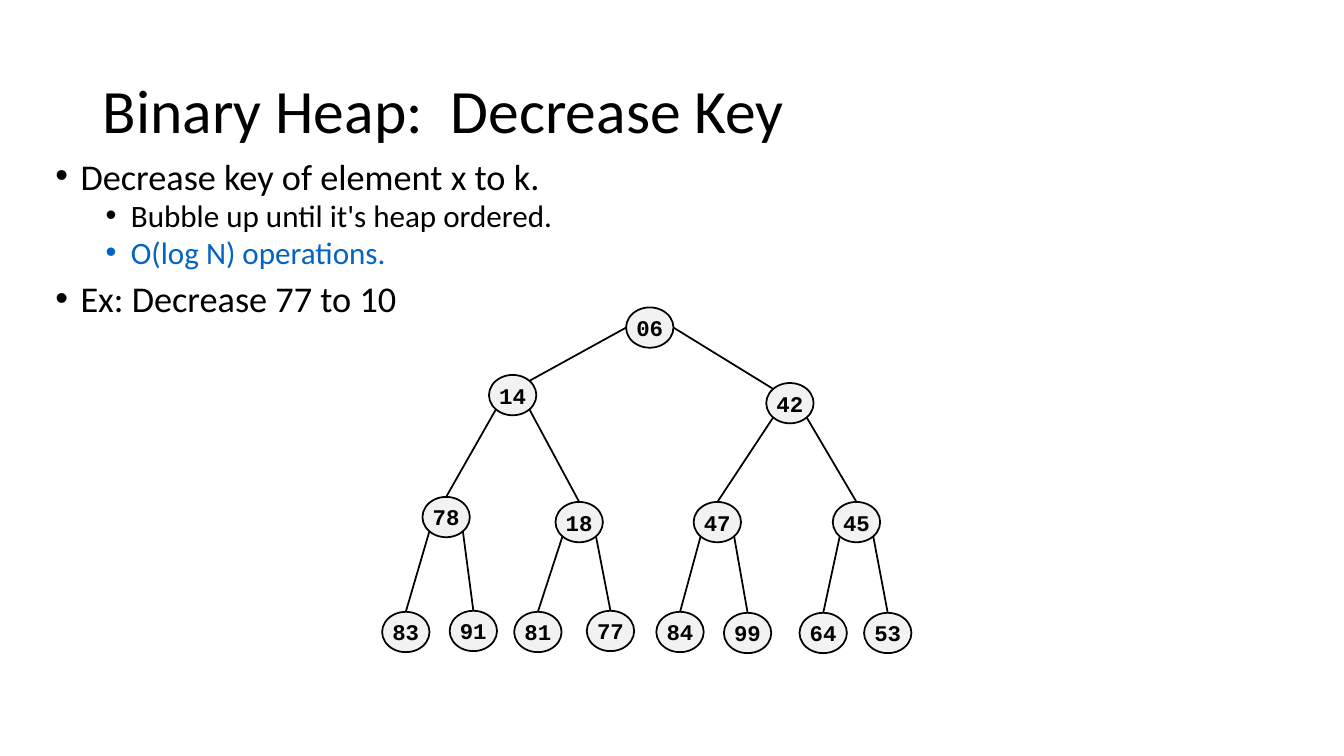
from dataclasses import dataclass
from math import sqrt

from lxml import etree
from pptx import Presentation
from pptx.dml.color import RGBColor
from pptx.enum.shapes import MSO_CONNECTOR, MSO_SHAPE
from pptx.enum.text import MSO_ANCHOR, PP_ALIGN
from pptx.oxml.ns import qn
from pptx.util import Inches, Pt

STRAIGHT = MSO_CONNECTOR.STRAIGHT
OVAL = MSO_SHAPE.OVAL
MIDDLE, TOP = MSO_ANCHOR.MIDDLE, MSO_ANCHOR.TOP
LEFT, CENTER = PP_ALIGN.LEFT, PP_ALIGN.CENTER


@dataclass(frozen=True)
class Theme:
    ink: str = "000000"
    accent: str = "0563C1"
    node_fill: str = "F2F2F2"
    text_font: str = "Calibri"
    node_font: str = "Courier New"
    title_size: float = 44
    bullet_sizes: tuple = (25.9, 22.2)
    node_size: float = 16
    line_width: float = 1.25


NODE_WIDTH, NODE_HEIGHT = 0.47, 0.4

BULLETS = [
    ("Decrease key of element x to k.", 0, Theme.ink),
    ("Bubble up until it's heap ordered.", 1, Theme.ink),
    ("O(log N) operations.", 1, Theme.accent),
    ("Ex: Decrease 77 to 10", 0, Theme.ink),
]

# Key, left and top in level order: the parent of entry i is entry (i - 1) // 2.
HEAP = [
    ("06", 6.21, 3.05),
    ("14", 4.85, 3.72), ("42", 7.6, 3.8),
    ("78", 4.19, 4.93), ("18", 5.51, 4.98), ("47", 6.88, 4.98), ("45", 8.26, 4.98),
    ("83", 3.79, 6.07), ("91", 4.46, 6.06), ("81", 5.1, 6.07), ("77", 5.82, 6.06),
    ("84", 6.51, 6.07), ("99", 7.18, 6.08), ("64", 7.93, 6.08), ("53", 8.57, 6.08),
]


def set_attributes(target, values):
    for name, value in values.items():
        setattr(target, name, value)


def rim_point(node, across, down):
    """Return a point on a node's outline, in the direction given from its centre."""
    _, left, top = node
    length = sqrt(across ** 2 + down ** 2)
    return (left + NODE_WIDTH / 2 * (1 + across / length),
            top + NODE_HEIGHT / 2 * (1 + down / length))


class SlideBuilder:
    def __init__(self, slide, theme):
        self.slide = slide
        self.theme = theme

    def styled_run(self, paragraph, text, font, size, color, bold=False):
        run = paragraph.add_run()
        run.text = text
        set_attributes(run.font, {"name": font, "size": Pt(size), "bold": bold})
        run.font.color.rgb = RGBColor.from_string(color)

    def text_frame(self, left, top, width, height, anchor):
        box = self.slide.shapes.add_textbox(
            Inches(left), Inches(top), Inches(width), Inches(height))
        set_attributes(box.text_frame, {"word_wrap": True, "vertical_anchor": anchor})
        return box.text_frame

    def title(self, text):
        paragraph = self.text_frame(0.92, 0.4, 11.5, 1.45, MIDDLE).paragraphs[0]
        set_attributes(paragraph, {"line_spacing": 0.9, "alignment": LEFT})
        self.styled_run(paragraph, text, self.theme.text_font,
                        self.theme.title_size, self.theme.ink)

    def bullets(self, items):
        frame = self.text_frame(0.45, 1.56, 10.41, 1.69, TOP)
        for index, (text, level, color) in enumerate(items):
            paragraph = frame.add_paragraph() if index else frame.paragraphs[0]
            set_attributes(paragraph, {
                "level": level, "line_spacing": 0.8, "alignment": LEFT,
                "space_before": Pt(5 if level else 10)})
            properties = paragraph._p.get_or_add_pPr()
            properties.set("marL", str(Inches(0.25 + 0.5 * level)))
            properties.set("indent", str(Inches(-0.25)))
            etree.SubElement(properties, qn("a:buFont")).set("typeface", "Arial")
            etree.SubElement(properties, qn("a:buChar")).set("char", "•")
            self.styled_run(paragraph, text, self.theme.text_font,
                            self.theme.bullet_sizes[level], color)

    def outline(self, line):
        line.width = Pt(self.theme.line_width)
        line.color.rgb = RGBColor.from_string(self.theme.ink)

    def edge(self, start, end):
        connector = self.slide.shapes.add_connector(
            STRAIGHT, *(Inches(value) for value in (*start, *end)))
        self.outline(connector.line)
        etree.SubElement(connector._element.spPr, qn("a:effectLst"))

    def node(self, key, left, top):
        shape = self.slide.shapes.add_shape(
            OVAL, Inches(left), Inches(top), Inches(NODE_WIDTH), Inches(NODE_HEIGHT))
        shape.shadow.inherit = False
        shape.fill.solid()
        shape.fill.fore_color.rgb = RGBColor.from_string(self.theme.node_fill)
        self.outline(shape.line)
        set_attributes(shape.text_frame, {"word_wrap": False, "vertical_anchor": MIDDLE})
        paragraph = shape.text_frame.paragraphs[0]
        paragraph.alignment = CENTER
        self.styled_run(paragraph, key, self.theme.node_font,
                        self.theme.node_size, self.theme.ink, bold=True)

    def heap(self, nodes):
        """Draw the edges first so that the nodes lie on top of them."""
        for index, child in enumerate(nodes[1:], start=1):
            parent_index = (index - 1) // 2
            side = -1 if index % 2 else 1
            from_root = parent_index == 0
            start = rim_point(nodes[parent_index], side, 0 if from_root else 1)
            end = rim_point(child, -side if from_root else 0, -1)
            self.edge(start, end)
        for node in nodes:
            self.node(*node)


def main():
    presentation = Presentation()
    set_attributes(presentation, {"slide_width": Inches(13.33), "slide_height": Inches(7.5)})
    slide = presentation.slides.add_slide(presentation.slide_layouts[6])
    builder = SlideBuilder(slide, Theme())
    builder.title("Binary Heap:  Decrease Key")
    builder.bullets(BULLETS)
    builder.heap(HEAP)
    presentation.save("out.pptx")


if __name__ == "__main__":
    main()
